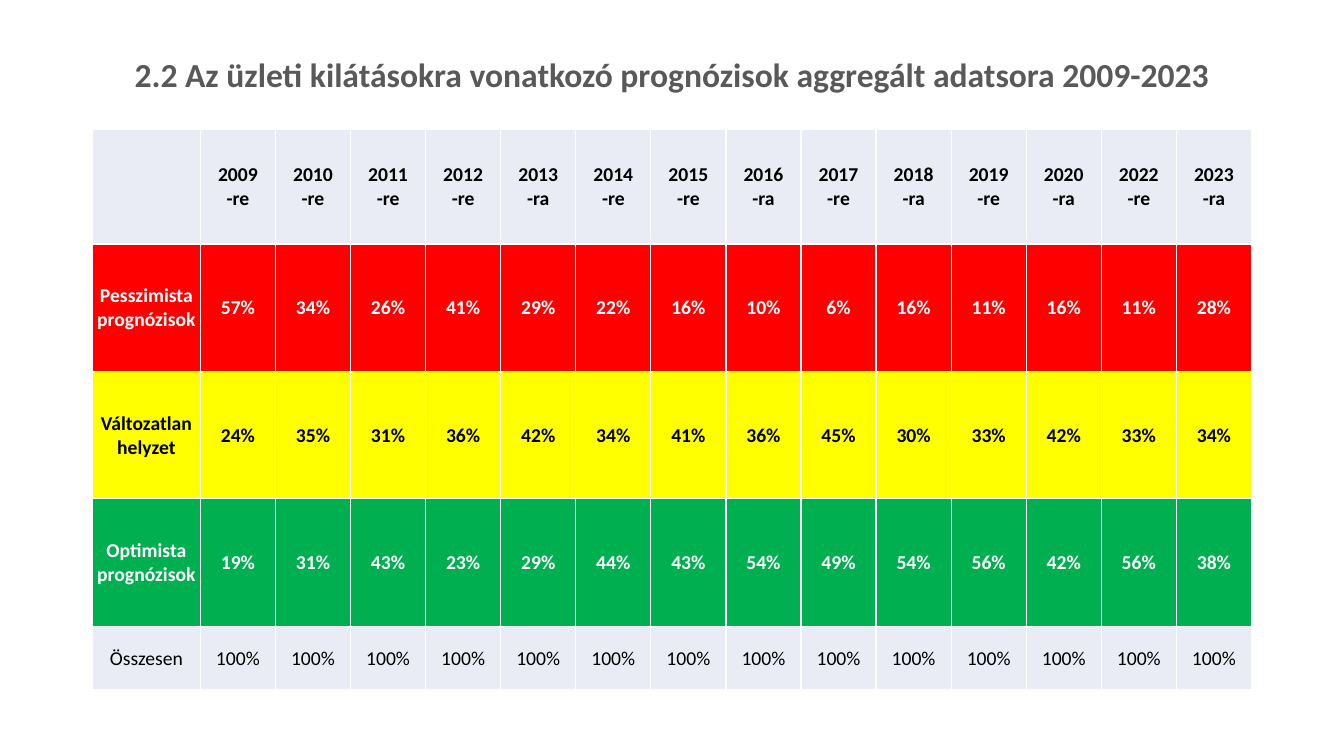
import lxml.etree
import pptx
import pptx.dml.color
import pptx.enum.text
import pptx.oxml.ns
import pptx.util

Cm = pptx.util.Cm
Pt = pptx.util.Pt
RGBColor = pptx.dml.color.RGBColor

FONT = "Calibri"
BLACK = RGBColor(0x00, 0x00, 0x00)
WHITE = RGBColor(0xFF, 0xFF, 0xFF)
GREY = RGBColor(0x59, 0x59, 0x59)
PALE_BLUE = RGBColor(0xE9, 0xEB, 0xF5)
RED = RGBColor(0xFF, 0x00, 0x00)
YELLOW = RGBColor(0xFF, 0xFF, 0x00)
GREEN = RGBColor(0x00, 0xB0, 0x50)

LEFT = Cm(2.33)
WIDTH = Cm(29.21)
LABEL_WIDTH = Cm(2.72)

TITLE = "2.2 Az üzleti kilátásokra vonatkozó prognózisok aggregált adatsora 2009-2023"
YEARS = [
    "2009\n-re", "2010\n-re", "2011\n-re", "2012\n-re", "2013\n-ra",
    "2014\n-re", "2015\n-re", "2016\n-ra", "2017\n-re", "2018\n-ra",
    "2019\n-re", "2020\n-ra", "2022\n-re", "2023\n-ra",
]
PESSIMISTIC = [57, 34, 26, 41, 29, 22, 16, 10, 6, 16, 11, 16, 11, 28]
UNCHANGED = [24, 35, 31, 36, 42, 34, 41, 36, 45, 30, 33, 42, 33, 34]
OPTIMISTIC = [19, 31, 43, 23, 29, 44, 43, 54, 49, 54, 56, 42, 56, 38]
TOTAL = [100] * len(YEARS)


def percents(values):
    return [f"{value}%" for value in values]


# Row height, fill, text colour, bold, texts
ROWS = [
    (Cm(2.9), PALE_BLUE, BLACK, True, [""] + YEARS),
    (Cm(3.21), RED, WHITE, True, ["Pesszimista\nprognózisok"] + percents(PESSIMISTIC)),
    (Cm(3.21), YELLOW, BLACK, True, ["Változatlan\nhelyzet"] + percents(UNCHANGED)),
    (Cm(3.21), GREEN, WHITE, True, ["Optimista\nprognózisok"] + percents(OPTIMISTIC)),
    (Cm(1.6), PALE_BLUE, BLACK, False, ["Összesen"] + percents(TOTAL)),
]


def add_span(para, text, size, color, bold):
    span = para.add_run()
    span.text = text
    span.font.name = FONT
    span.font.size = Pt(size)
    span.font.bold = bold
    span.font.color.rgb = color


def set_title(page):
    title = page.shapes.title
    title.left, title.top, title.width, title.height = LEFT, Cm(1.02), WIDTH, Cm(1.83)
    frame = title.text_frame
    frame.word_wrap = True
    frame.auto_size = pptx.enum.text.MSO_AUTO_SIZE.NONE
    frame.vertical_anchor = pptx.enum.text.MSO_ANCHOR.MIDDLE
    para = frame.paragraphs[0]
    para.alignment = pptx.enum.text.PP_ALIGN.CENTER
    para.line_spacing = 0.9
    add_span(para, TITLE, 24, GREY, True)


def set_borders(cell, color):
    """Draw a one-point line on all four sides; call before the cell is filled."""
    properties = cell._tc.get_or_add_tcPr()
    qn = pptx.oxml.ns.qn
    for side in ("a:lnL", "a:lnR", "a:lnT", "a:lnB"):
        line = lxml.etree.SubElement(properties, qn(side), w=str(Pt(1)))
        fill = lxml.etree.SubElement(line, qn("a:solidFill"))
        lxml.etree.SubElement(fill, qn("a:srgbClr"), val=str(color))


def set_cell(cell, text, fill, color, bold):
    set_borders(cell, WHITE)
    cell.fill.solid()
    cell.fill.fore_color.rgb = fill
    cell.vertical_anchor = pptx.enum.text.MSO_ANCHOR.MIDDLE
    cell.margin_left = cell.margin_right = cell.margin_top = Cm(0.02)
    cell.margin_bottom = 0
    if not text:
        return
    para = cell.text_frame.paragraphs[0]
    para.alignment = pptx.enum.text.PP_ALIGN.CENTER
    for index, line in enumerate(text.split("\n")):
        if index:
            para.add_line_break()
        add_span(para, line, 14, color, bold)


def add_forecast_table(page):
    height = sum(row[0] for row in ROWS)
    frame = page.shapes.add_table(
        len(ROWS), len(YEARS) + 1, LEFT, Cm(3.25), WIDTH, height)
    table = frame.table
    table.first_row = table.horz_banding = False
    for index, column in enumerate(table.columns):
        column.width = (WIDTH - LABEL_WIDTH) // len(YEARS) if index else LABEL_WIDTH
    for row, (row_height, fill, color, bold, texts) in zip(table.rows, ROWS):
        row.height = row_height
        for cell, text in zip(row.cells, texts):
            set_cell(cell, text, fill, color, bold)


def main():
    deck = pptx.Presentation()
    deck.slide_width, deck.slide_height = Cm(33.87), Cm(19.05)
    page = deck.slides.add_slide(deck.slide_layouts.get_by_name("Title Only"))
    set_title(page)
    add_forecast_table(page)
    deck.save("out.pptx")


if __name__ == "__main__":
    main()
